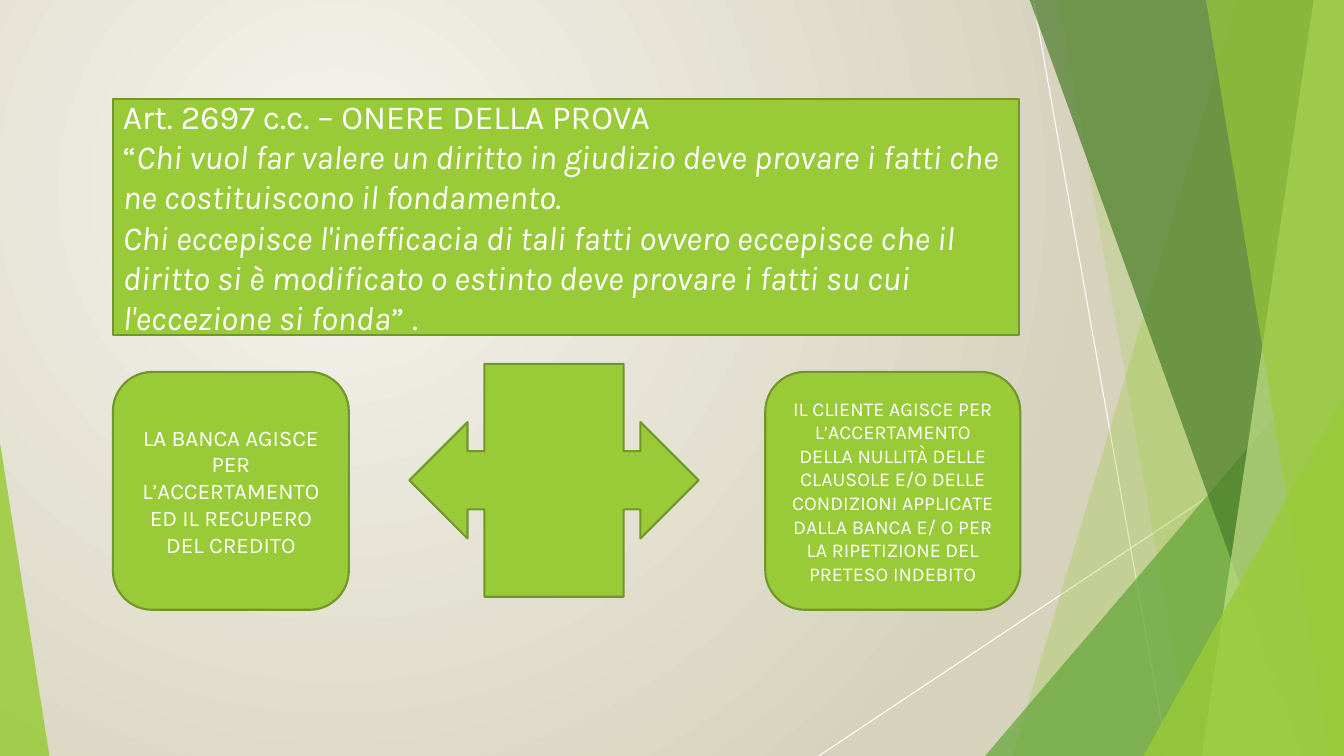
from dataclasses import dataclass

import pptx
import pptx.dml.color
import pptx.enum.shapes
import pptx.enum.text
import pptx.oxml
import pptx.oxml.ns
import pptx.util
from lxml import etree

PX = 9144  # EMU per px, 100 px to the inch
W, H = 1333, 750
MSO = pptx.enum.shapes.MSO_SHAPE
ALIGN = pptx.enum.text.PP_ALIGN
qn = pptx.oxml.ns.qn


@dataclass(frozen=True)
class Theme:
    font: str = "Karla"
    white: str = "FFFFFF"
    lime: str = "99CB38"
    olive: str = "719629"
    green: str = "63A537"
    forest: str = "4A7C29"
    pale: str = "C2E088"
    bg_inner: str = "F5F4EE"
    bg_outer: str = "D6D2BC"
    article: int = 24
    bank: int = 16
    client: int = 14
    outline: float = 1.5
    hairline: float = 0.75


T = Theme()


@dataclass(frozen=True)
class Band:
    """Facet reaching the right edge, given by its left side."""
    top: int
    bottom: int
    color: str
    alpha: int


@dataclass(frozen=True)
class Wedge:
    """Triangle standing on the bottom edge."""
    x: int
    y: int
    w: int
    peak: int
    color: str
    alpha: int


@dataclass(frozen=True)
class Box:
    x: int
    y: int
    w: int
    h: int
    kind: MSO
    text: str = ""
    size: int = 0


HAIRLINES = [(1025, 0, 1158, H), (W, 403, 812, H)]
FACETS = [
    Band(1228, 1004, T.lime, 30),
    Band(1050, 1183, T.lime, 20),
    Wedge(977, 333, 356, 1, T.green, 72),
    Band(1021, 1291, T.forest, 70),
    Band(1303, 1192, T.pale, 70),
    Band(1196, 1318, T.lime, 65),
    Wedge(1134, 393, 199, 1, T.lime, 80),
    Wedge(0, 439, 49, 0, T.lime, 85),
]
ARTICLE = Box(112, 98, 899, 234, MSO.RECTANGLE)
BOXES = [
    Box(406, 361, 287, 231, MSO.LEFT_RIGHT_ARROW_CALLOUT),
    Box(112, 369, 234, 236, MSO.FLOWCHART_ALTERNATE_PROCESS,
        "LA BANCA AGISCE PER L’ACCERTAMENTO ED IL RECUPERO DEL CREDITO", T.bank),
    Box(759, 369, 253, 236, MSO.FLOWCHART_ALTERNATE_PROCESS,
        "IL CLIENTE AGISCE PER L’ACCERTAMENTO DELLA NULLITÀ DELLE CLAUSOLE E/O "
        "DELLE CONDIZIONI APPLICATE DALLA BANCA E/ O PER LA RIPETIZIONE DEL "
        "PRETESO INDEBITO", T.client),
]
QUOTE = ("Chi vuol far valere un diritto in giudizio deve provare i fatti che ne "
         "costituiscono il fondamento.\n"
         "Chi eccepisce l'inefficacia di tali fatti ovvero eccepisce che il diritto "
         "si è modificato o estinto deve provare i fatti su cui l'eccezione si fonda")


def rgb(color: str) -> pptx.dml.color.RGBColor:
    return pptx.dml.color.RGBColor.from_string(color)


def add_text(p, text: str, *, size: int, italic: bool = False,
             align: ALIGN = ALIGN.LEFT) -> None:
    p.alignment = align
    for i, line in enumerate(text.split("\n")):
        if i:
            p.add_line_break()
        r = p.add_run()
        r.text = line
        r.font.name, r.font.size = T.font, pptx.util.Pt(size)
        r.font.italic = italic
        r.font.color.rgb = rgb(T.white)


def paint_background(s) -> None:
    fill = s.background.fill
    fill.gradient()
    for stop, color in zip(fill.gradient_stops, (T.bg_inner, T.bg_outer)):
        stop.color.rgb = rgb(color)
    lin = s.element.find(".//" + qn("a:lin"))
    path = pptx.oxml.parse_xml(
        f'<a:path {pptx.oxml.ns.nsdecls("a")} path="circle">'
        '<a:fillToRect l="50000" t="50000" r="100000" b="100000"/></a:path>')
    lin.getparent().replace(lin, path)


def add_hairline(s, x1: int, y1: int, x2: int, y2: int) -> None:
    line = s.shapes.add_connector(pptx.enum.shapes.MSO_CONNECTOR.STRAIGHT,
                                  x1 * PX, y1 * PX, x2 * PX, y2 * PX)
    line.line.color.rgb = rgb(T.white)
    line.line.width = pptx.util.Pt(T.hairline)
    etree.SubElement(line.element.spPr, qn("a:effectLst"))


def add_facet(s, facet: Band | Wedge) -> None:
    if isinstance(facet, Band):
        fb = s.shapes.build_freeform(facet.top, -1, scale=PX)
        fb.add_line_segments([(W, -1), (W, H), (facet.bottom, H)], close=True)
        sp = fb.convert_to_shape()
    else:
        sp = s.shapes.add_shape(MSO.ISOSCELES_TRIANGLE, facet.x * PX, facet.y * PX,
                                facet.w * PX, (H - facet.y) * PX)
        sp.adjustments[0] = facet.peak
    sp.shadow.inherit = False
    sp.line.fill.background()
    sp.fill.solid()
    sp.fill.fore_color.rgb = rgb(facet.color)
    clr = sp.element.spPr.find(".//" + qn("a:srgbClr"))
    etree.SubElement(clr, qn("a:alpha"), val=str(facet.alpha * 1000))


def add_box(s, box: Box):
    sp = s.shapes.add_shape(box.kind, box.x * PX, box.y * PX, box.w * PX, box.h * PX)
    sp.shadow.inherit = False
    sp.fill.solid()
    sp.fill.fore_color.rgb = rgb(T.lime)
    sp.line.color.rgb = rgb(T.olive)
    sp.line.width = pptx.util.Pt(T.outline)
    tf = sp.text_frame
    tf.word_wrap = True
    tf.vertical_anchor = pptx.enum.text.MSO_ANCHOR.MIDDLE
    if box.text:
        add_text(tf.paragraphs[0], box.text, size=box.size, align=ALIGN.CENTER)
    return tf


def main() -> None:
    prs = pptx.Presentation()
    prs.slide_width, prs.slide_height = W * PX, H * PX
    s = prs.slides.add_slide(prs.slide_layouts[6])

    # Backdrop
    paint_background(s)
    for ends in HAIRLINES:
        add_hairline(s, *ends)
    for facet in FACETS:
        add_facet(s, facet)

    # Article of law
    tf = add_box(s, ARTICLE)
    add_text(tf.paragraphs[0], "Art. 2697 c.c. – ONERE DELLA PROVA", size=T.article)
    p = tf.add_paragraph()
    for text, italic in (("“", False), (QUOTE, True), ("” .", False)):
        add_text(p, text, size=T.article, italic=italic)

    # The two parties and the arrow between them
    for box in BOXES:
        add_box(s, box)

    prs.save("out.pptx")


if __name__ == "__main__":
    main()
